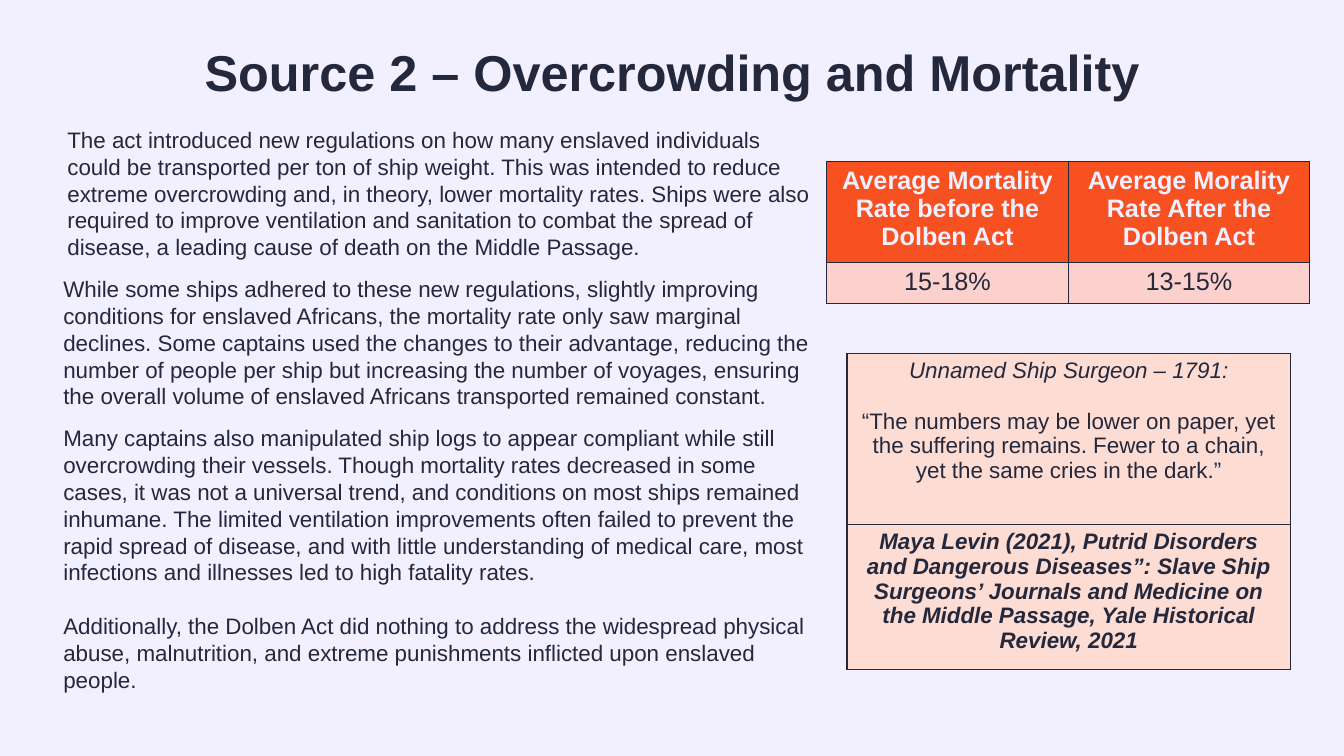
from pptx import Presentation
from pptx.dml.color import RGBColor
from pptx.enum import text
from pptx.oxml import parse_xml
from pptx.oxml.ns import nsdecls
from pptx.util import Inches, Pt

INK = RGBColor(0x24, 0x28, 0x3C)
PALE = RGBColor(0xF2, 0xF0, 0xFF)
ORANGE = RGBColor(0xF7, 0x51, 0x22)
PINK = RGBColor(0xFC, 0xD0, 0xCD)
PEACH = RGBColor(0xFD, 0xDC, 0xD3)

LIMITS = (
    "The act introduced new regulations on how many enslaved individuals could be "
    "transported per ton of ship weight. This was intended to reduce extreme "
    "overcrowding and, in theory, lower mortality rates. Ships were also required to "
    "improve ventilation and sanitation to combat the spread of disease, a leading "
    "cause of death on the Middle Passage."
)
VOYAGES = (
    "While some ships adhered to these new regulations, slightly improving conditions "
    "for enslaved Africans, the mortality rate only saw marginal declines. Some captains "
    "used the changes to their advantage, reducing the number of people per ship but "
    "increasing the number of voyages, ensuring the overall volume of enslaved Africans "
    "transported remained constant."
)
LOGS = (
    "Many captains also manipulated ship logs to appear compliant while still "
    "overcrowding their vessels. Though mortality rates decreased in some cases, it was "
    "not a universal trend, and conditions on most ships remained inhumane. The limited "
    "ventilation improvements often failed to prevent the rapid spread of disease, and "
    "with little understanding of medical care, most infections and illnesses led to "
    "high fatality rates."
)
ABUSE = (
    "Additionally, the Dolben Act did nothing to address the widespread physical abuse, "
    "malnutrition, and extreme punishments inflicted upon enslaved people."
)
QUOTE = (
    "“The numbers may be lower on paper, yet the suffering remains. Fewer to a chain, "
    "yet the same cries in the dark.”"
)
CITE = (
    "Maya Levin (2021), Putrid Disorders and Dangerous Diseases”: Slave Ship Surgeons’ "
    "Journals and Medicine on the Middle Passage, Yale Historical Review, 2021"
)


def write(frame, words, size=16, color=INK, bold=False, italic=False,
          center=False, gap=0, line=None):
    first = frame.paragraphs[0]
    para = frame.add_paragraph() if first.runs else first
    if center:
        para.alignment = text.PP_ALIGN.CENTER
    if gap:
        para.space_before = Pt(gap)
    if line:
        para.line_spacing = line
    run = para.add_run()
    run.text = words
    font = run.font
    font.name, font.size = "Arial", Pt(size)
    font.bold, font.italic = bold, italic
    font.color.rgb = color


class Board:
    def __init__(self, deck):
        self.slide = deck.slides.add_slide(deck.slide_layouts[6])
        back = self.slide.background.fill
        back.solid()
        back.fore_color.rgb = PALE

    def box(self, left, top, width, height):
        frame = self.slide.shapes.add_textbox(
            Inches(left), Inches(top), Inches(width), Inches(height)).text_frame
        frame.word_wrap = True
        return frame

    def table(self, left, top, width, rows, cols):
        grid = self.slide.shapes.add_table(
            len(rows), cols, Inches(left), Inches(top),
            Inches(width), Inches(sum(rows))).table
        for row, high in zip(grid.rows, rows):
            row.height = Inches(high)
        return grid

    def cell(self, cell, fill):
        props = cell._tc.get_or_add_tcPr()
        for side in ("lnL", "lnR", "lnT", "lnB"):
            props.append(parse_xml(
                f'<a:{side} {nsdecls("a")} w="12700"><a:solidFill>'
                f'<a:srgbClr val="{INK}"/></a:solidFill></a:{side}>'))
        cell.fill.solid()
        cell.fill.fore_color.rgb = fill
        return cell.text_frame


def main():
    deck = Presentation()
    deck.slide_width, deck.slide_height = Inches(13.33), Inches(7.5)
    board = Board(deck)

    title = board.box(0.92, 0.3, 11.5, 0.9)
    title.vertical_anchor = text.MSO_ANCHOR.MIDDLE
    write(title, "Source 2 – Overcrowding and Mortality", size=36, bold=True,
          center=True, line=0.9)

    for left, top, high, words in (
        (0.57, 1.2, 1.45, LIMITS),
        (0.53, 2.68, 1.45, VOYAGES),
        (0.53, 4.16, 2.79, LOGS),
    ):
        body = board.box(left, top, 7.64, high)
        write(body, words)
    write(body, ABUSE, gap=19)

    rates = board.table(8.2, 1.6, 4.79, (1, 0.41), 2)
    for col, (head, rate) in enumerate((
        ("Average Mortality Rate before the Dolben Act", "15-18%"),
        ("Average Morality Rate After the Dolben Act", "13-15%"),
    )):
        write(board.cell(rates.cell(0, col), ORANGE), head, size=18,
              color=PALE, bold=True, center=True)
        write(board.cell(rates.cell(1, col), PINK), rate, size=18, center=True)

    source = board.table(8.4, 3.51, 4.4, (1.69, 1.44), 1)
    quote = board.cell(source.cell(0, 0), PEACH)
    write(quote, "Unnamed Ship Surgeon – 1791:", italic=True, center=True)
    write(quote, QUOTE, center=True, gap=18)
    write(board.cell(source.cell(1, 0), PEACH), CITE, bold=True, italic=True,
          center=True)

    deck.save("out.pptx")


if __name__ == "__main__":
    main()
